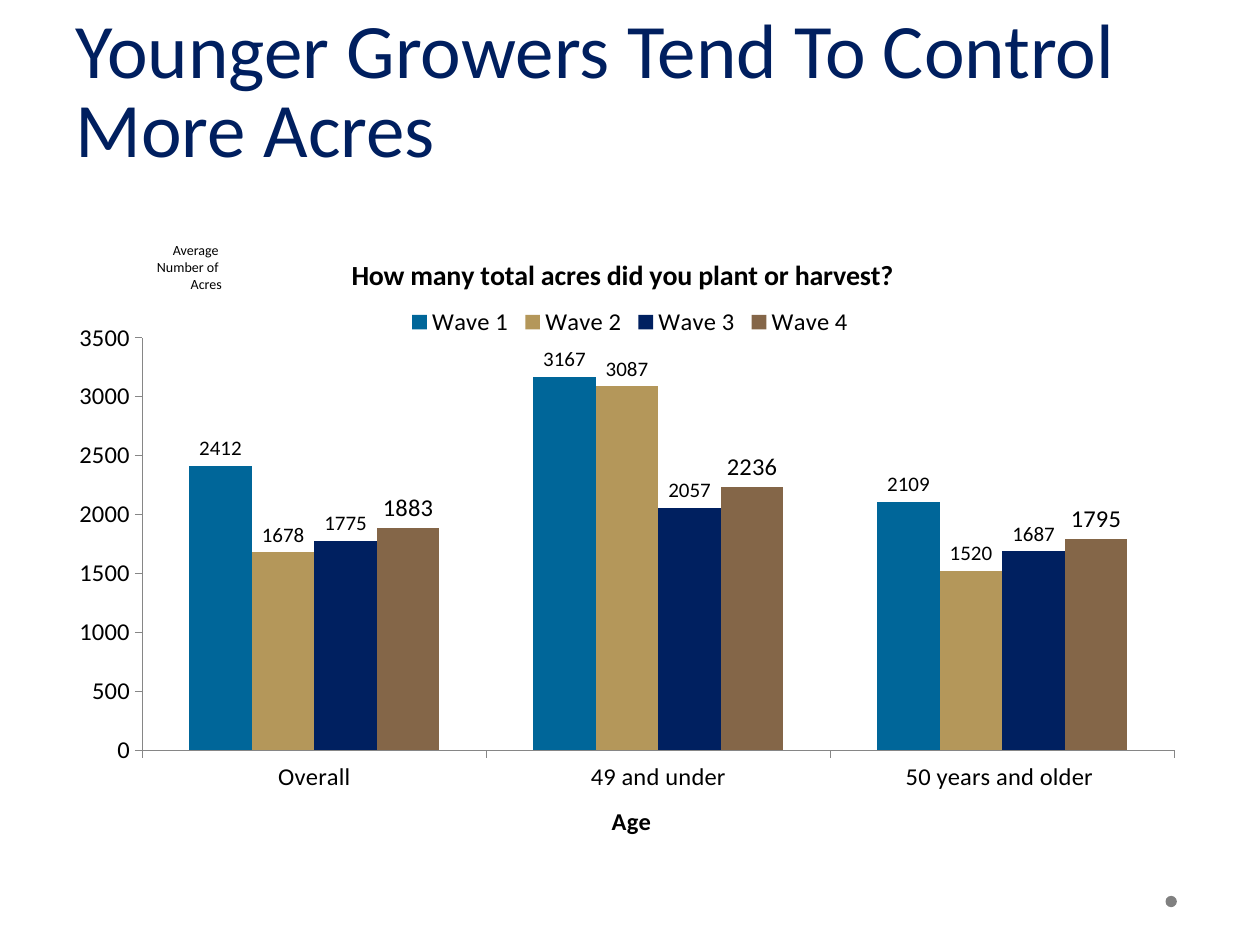
import dataclasses

import pptx
import pptx.chart.data
import pptx.dml.color
import pptx.enum.chart
import pptx.enum.shapes
import pptx.enum.text
import pptx.oxml
import pptx.oxml.ns
import pptx.util

Inches = pptx.util.Inches
Pt = pptx.util.Pt

CATEGORIES = ["Overall", "49 and under", "50 years and older "]
WAVES = {
    "Wave 1": [2412, 3167, 2109],
    "Wave 2": [1678, 3087, 1520],
    "Wave 3": [1775, 2057, 1687],
    "Wave 4": [1883, 2236, 1795],
}


@dataclasses.dataclass(frozen=True)
class Theme:
    """Colours and type sizes of the slide."""

    font: str = "Calibri"
    title: str = "001F5F"
    text: str = "000000"
    axis: str = "868686"
    dot: str = "808080"
    waves: tuple = ("006699", "B4975A", "002060", "846648")
    title_size: int = 44
    title_leading: int = 45
    heading_size: int = 16
    chart_size: int = 14
    label_sizes: tuple = (12, 12, 12, 14)
    note_size: int = 8


class SlideBuilder:
    """Adds styled elements to the current slide."""

    def __init__(self, slide, theme):
        self.slide = slide
        self.theme = theme

    def color(self, value):
        """Return an RGB colour."""
        return pptx.dml.color.RGBColor.from_string(value)

    def style(self, font, size, color, bold=None):
        """Format a font."""
        font.name = self.theme.font
        font.size = Pt(size)
        font.bold = bold
        font.color.rgb = self.color(color)

    def title(self, text, left, top, width, height):
        """Fill and place the title placeholder."""
        shape = self.slide.shapes.title
        shape.left, shape.top = Inches(left), Inches(top)
        shape.width, shape.height = Inches(width), Inches(height)
        frame = shape.text_frame
        frame.text = text
        frame.word_wrap = True
        frame.auto_size = pptx.enum.text.MSO_AUTO_SIZE.NONE
        frame.vertical_anchor = pptx.enum.text.MSO_ANCHOR.BOTTOM
        paragraph = frame.paragraphs[0]
        paragraph.alignment = pptx.enum.text.PP_ALIGN.LEFT
        paragraph.line_spacing = Pt(self.theme.title_leading)
        self.style(paragraph.runs[0].font, self.theme.title_size, self.theme.title)

    def dot(self, left, top, size):
        """Add a plain round dot."""
        shape = self.slide.shapes.add_shape(
            pptx.enum.shapes.MSO_SHAPE.OVAL,
            Inches(left), Inches(top), Inches(size), Inches(size))
        shape.shadow.inherit = False
        shape.fill.solid()
        shape.fill.fore_color.rgb = self.color(self.theme.dot)
        shape.line.fill.background()

    def note(self, text, left, top, width, height):
        """Add a small right-aligned note."""
        shape = self.slide.shapes.add_textbox(
            Inches(left), Inches(top), Inches(width), Inches(height))
        frame = shape.text_frame
        frame.text = text
        frame.word_wrap = False
        frame.auto_size = pptx.enum.text.MSO_AUTO_SIZE.SHAPE_TO_FIT_TEXT
        for paragraph in frame.paragraphs:
            paragraph.alignment = pptx.enum.text.PP_ALIGN.RIGHT
            self.style(paragraph.runs[0].font, self.theme.note_size, self.theme.text)

    def layout(self, element, index, inner=False, **values):
        """Place a chart part by fractions of the chart area."""
        for old in element.findall(pptx.oxml.ns.qn("c:layout")):
            element.remove(old)
        target = '<c:layoutTarget val="inner"/>' if inner else ""
        modes = '<c:xMode val="edge"/><c:yMode val="edge"/>'
        sizes = "".join(f'<c:{key} val="{value}"/>' for key, value in values.items())
        element.insert(index, pptx.oxml.parse_xml(
            f'<c:layout {pptx.oxml.ns.nsdecls("c")}><c:manualLayout>'
            f"{target}{modes}{sizes}</c:manualLayout></c:layout>"))

    def chart_heading(self, heading, text, size, x, y):
        """Set and place a chart or axis title."""
        heading.text_frame.text = text
        run = heading.text_frame.paragraphs[0].runs[0]
        self.style(run.font, size, self.theme.text, True)
        self.layout(heading._element, 1, x=x, y=y)

    def column_chart(self, heading, axis_title, left, top, width, height):
        """Add the clustered column chart of waves by age."""
        data = pptx.chart.data.CategoryChartData(number_format="0")
        data.categories = CATEGORIES
        for name, values in WAVES.items():
            data.add_series(name, values)
        chart = self.slide.shapes.add_chart(
            pptx.enum.chart.XL_CHART_TYPE.COLUMN_CLUSTERED,
            Inches(left), Inches(top), Inches(width), Inches(height), data).chart
        theme = self.theme
        self.style(chart.font, theme.chart_size, theme.text)
        self.chart_heading(chart.chart_title, heading, theme.heading_size, 0.25, 0.05)
        chart.has_legend = True
        chart.legend.position = pptx.enum.chart.XL_LEGEND_POSITION.TOP
        chart.legend.include_in_layout = False
        self.layout(chart.legend._element, 1, x=0.3, y=0.14, w=0.4, h=0.05)
        self.layout(chart._chartSpace.chart.plotArea, 0, True,
                    x=0.07, y=0.19, w=0.91, h=0.67)
        for axis in (chart.category_axis, chart.value_axis):
            axis.has_major_gridlines = False
            axis.major_tick_mark = pptx.enum.chart.XL_TICK_MARK.OUTSIDE
            axis.format.line.color.rgb = self.color(theme.axis)
            axis.format.line.width = Pt(0.75)
        self.chart_heading(chart.category_axis.axis_title, axis_title,
                           theme.chart_size, 0.48, 0.94)
        chart.value_axis.minimum_scale = 0
        chart.value_axis.maximum_scale = 3500
        chart.value_axis.major_unit = 500
        chart.value_axis.tick_labels.number_format = "0"
        chart.value_axis.tick_labels.number_format_is_linked = False
        plot = chart.plots[0]
        plot.vary_by_categories = False
        plot.gap_width = 150
        plot.overlap = 0
        for series, fill, size in zip(plot.series, theme.waves, theme.label_sizes):
            series.format.fill.solid()
            series.format.fill.fore_color.rgb = self.color(fill)
            labels = series.data_labels
            labels.show_value = True
            labels.number_format = "0"
            labels.number_format_is_linked = False
            labels.position = pptx.enum.chart.XL_LABEL_POSITION.OUTSIDE_END
            self.style(labels.font, size, theme.text)


def main():
    """Build and save the slide."""
    presentation = pptx.Presentation()
    presentation.slide_width = Inches(10)
    presentation.slide_height = Inches(7.5)
    slide = presentation.slides.add_slide(presentation.slide_layouts[5])
    builder = SlideBuilder(slide, Theme())
    builder.dot(9.25, 7.11, 0.09)
    builder.title("Younger Growers Tend To Control More Acres", 0.5, 0, 9, 1.42)
    builder.column_chart("How many total acres did you plant or harvest?", "Age ",
                         0.5, 1.75, 9, 4.95)
    builder.note("Average \nNumber of \nAcres", 1.14, 1.87, 0.72, 0.5)
    presentation.save("out.pptx")


if __name__ == "__main__":
    main()
